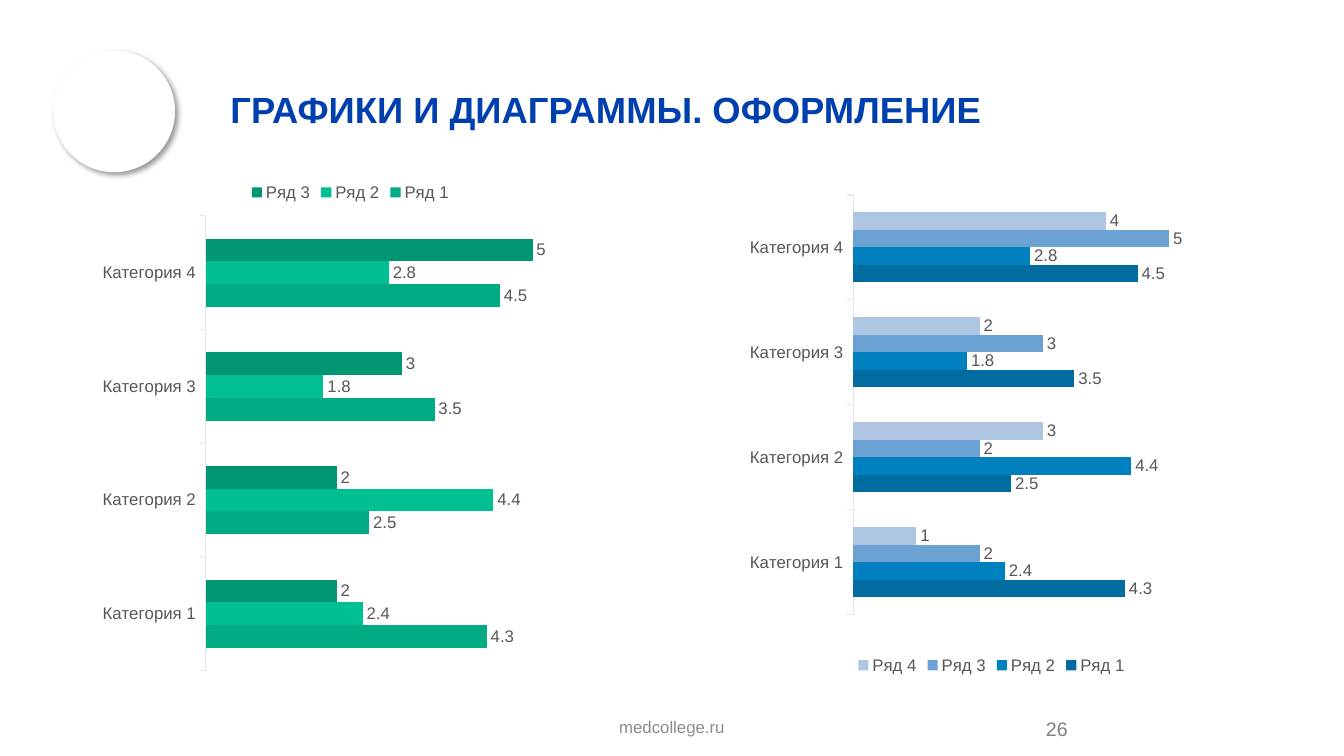
from lxml import etree
from pptx import Presentation
from pptx.chart.data import CategoryChartData
from pptx.dml.color import RGBColor
from pptx.enum.chart import XL_CHART_TYPE, XL_LABEL_POSITION, XL_LEGEND_POSITION, XL_TICK_MARK
from pptx.enum.shapes import MSO_SHAPE
from pptx.enum.text import MSO_ANCHOR, PP_ALIGN
from pptx.oxml import parse_xml
from pptx.oxml.ns import nsdecls, qn
from pptx.util import Pt

BAR_CLUSTERED = XL_CHART_TYPE.BAR_CLUSTERED
OUTSIDE_END = XL_LABEL_POSITION.OUTSIDE_END
LEGEND_TOP = XL_LEGEND_POSITION.TOP
TICK_OUTSIDE, TICK_NONE = XL_TICK_MARK.OUTSIDE, XL_TICK_MARK.NONE
TOP, MIDDLE = MSO_ANCHOR.TOP, MSO_ANCHOR.MIDDLE
LEFT, CENTER = PP_ALIGN.LEFT, PP_ALIGN.CENTER

FONT = "Arial"
WHITE = RGBColor(0xFF, 0xFF, 0xFF)
TITLE_BLUE = RGBColor(0x00, 0x40, 0xAE)
CHART_GRAY = RGBColor(0x57, 0x57, 0x57)
AXIS_GRAY = RGBColor(0xE6, 0xE6, 0xE6)
NUMBER_GRAY = RGBColor(0x80, 0x80, 0x80)
FOOTER_GRAY = RGBColor(0x8C, 0x8C, 0x8C)
GREENS = [RGBColor(0x00, 0xAB, 0x84), RGBColor(0x00, 0xC0, 0x92), RGBColor(0x00, 0x96, 0x72)]
BLUES = [RGBColor(0x00, 0x6C, 0xA0), RGBColor(0x00, 0x80, 0xBE),
         RGBColor(0x6C, 0xA1, 0xD3), RGBColor(0xAF, 0xC6, 0xE3)]

CATEGORIES = [f"Категория {n}" for n in range(1, 5)]
SERIES_VALUES = [(4.3, 2.5, 3.5, 4.5), (2.4, 4.4, 1.8, 2.8), (2, 2, 3, 5), (1, 3, 2, 4)]

prs = Presentation()
prs.slide_width, prs.slide_height = Pt(960), Pt(540)
slide = prs.slides.add_slide(prs.slide_layouts[6])


def style_font(font, size, color):
    font.name, font.size, font.color.rgb = FONT, Pt(size), color


def place(parent, index, **fractions):
    """Give a chart part a manual layout in fractions of the chart."""
    for old in parent.findall(qn("c:layout")):
        parent.remove(old)
    layout = parse_xml(f"<c:layout {nsdecls('c')}><c:manualLayout/></c:layout>")
    if "w" in fractions:
        etree.SubElement(layout[0], qn("c:layoutTarget")).set("val", "inner")
    for axis in "xy":
        etree.SubElement(layout[0], qn(f"c:{axis}Mode")).set("val", "edge")
    for key, fraction in fractions.items():
        etree.SubElement(layout[0], qn(f"c:{key}")).set("val", str(fraction))
    parent.insert(index, layout)


# Emblem disc with a soft shadow
disc = slide.shapes.add_shape(MSO_SHAPE.OVAL, Pt(38), Pt(36), Pt(87), Pt(87))
disc.fill.solid()
disc.fill.fore_color.rgb = WHITE
disc.line.fill.background()
disc.shadow.inherit = False
disc_effects = disc._element.spPr.find(qn("a:effectLst"))
disc_effects.append(parse_xml(
    f'<a:outerShdw {nsdecls("a")} blurRad="{Pt(4)}" dist="{Pt(3)}" dir="2700000" algn="tl" '
    'rotWithShape="0"><a:srgbClr val="000000"><a:alpha val="40000"/></a:srgbClr></a:outerShdw>'))

# Title, footer and slide number
texts = [
    ("ГРАФИКИ И ДИАГРАММЫ. ОФОРМЛЕНИЕ", (157.5, 36, 749, 87), 26, TITLE_BLUE, True, MIDDLE, LEFT, 0.9),
    ("medcollege.ru", (318, 508.5, 324, 29), 12, FOOTER_GRAY, False, TOP, CENTER, 1.0),
    ("26", (740, 505.5, 135.5, 29.5), 14, NUMBER_GRAY, False, MIDDLE, LEFT, 1.0),
]
for text, box, size, color, bold, anchor, align, spacing in texts:
    frame = slide.shapes.add_textbox(*map(Pt, box)).text_frame
    frame.word_wrap = True
    frame.vertical_anchor = anchor
    frame.text = text
    line = frame.paragraphs[0]
    line.alignment, line.line_spacing = align, spacing
    style_font(line.runs[0].font, size, color)
    line.runs[0].font.bold = bold

# Bar charts: left edge, series colours, plot area, legend corner
charts = [
    (66, GREENS, dict(x=0.22, y=0.086, w=0.76, h=0.895), None),
    (525.5, BLUES, dict(x=0.228, y=0.045, w=0.735, h=0.826), dict(x=0.227, y=0.945)),
]
for left, colors, plot_area, legend_corner in charts:
    data = CategoryChartData()
    data.categories = CATEGORIES
    for number, values in enumerate(SERIES_VALUES[:len(colors)], 1):
        data.add_series(f"Ряд {number}", values)
    chart = slide.shapes.add_chart(
        BAR_CLUSTERED, Pt(left), Pt(123), Pt(368.5), Pt(363), data).chart
    style_font(chart.font, 10, CHART_GRAY)
    chart.has_title = False

    plot = chart.plots[0]
    plot.gap_width, plot.overlap = 200, 0
    plot.vary_by_categories = False
    for series, color in zip(plot.series, colors):
        series.format.fill.solid()
        series.format.fill.fore_color.rgb = color
        labels = series.data_labels
        labels.show_value = True
        labels.position = OUTSIDE_END
        style_font(labels.font, 12, CHART_GRAY)

    category_axis, value_axis = chart.category_axis, chart.value_axis
    category_axis.major_tick_mark = TICK_OUTSIDE
    category_axis.minor_tick_mark = TICK_NONE
    category_axis.format.line.color.rgb = AXIS_GRAY
    category_axis.format.line.width = Pt(0.75)
    style_font(category_axis.tick_labels.font, 12, CHART_GRAY)
    value_axis.minimum_scale, value_axis.maximum_scale = 0, 6
    value_axis.has_major_gridlines = False
    value_axis.visible = False

    chart.has_legend = True
    chart.legend.position = LEGEND_TOP
    chart.legend.include_in_layout = False
    style_font(chart.legend.font, 12, CHART_GRAY)
    place(chart._chartSpace.chart.plotArea, 0, **plot_area)
    if legend_corner:
        place(chart.legend._element, 1, **legend_corner)

prs.save("out.pptx")
